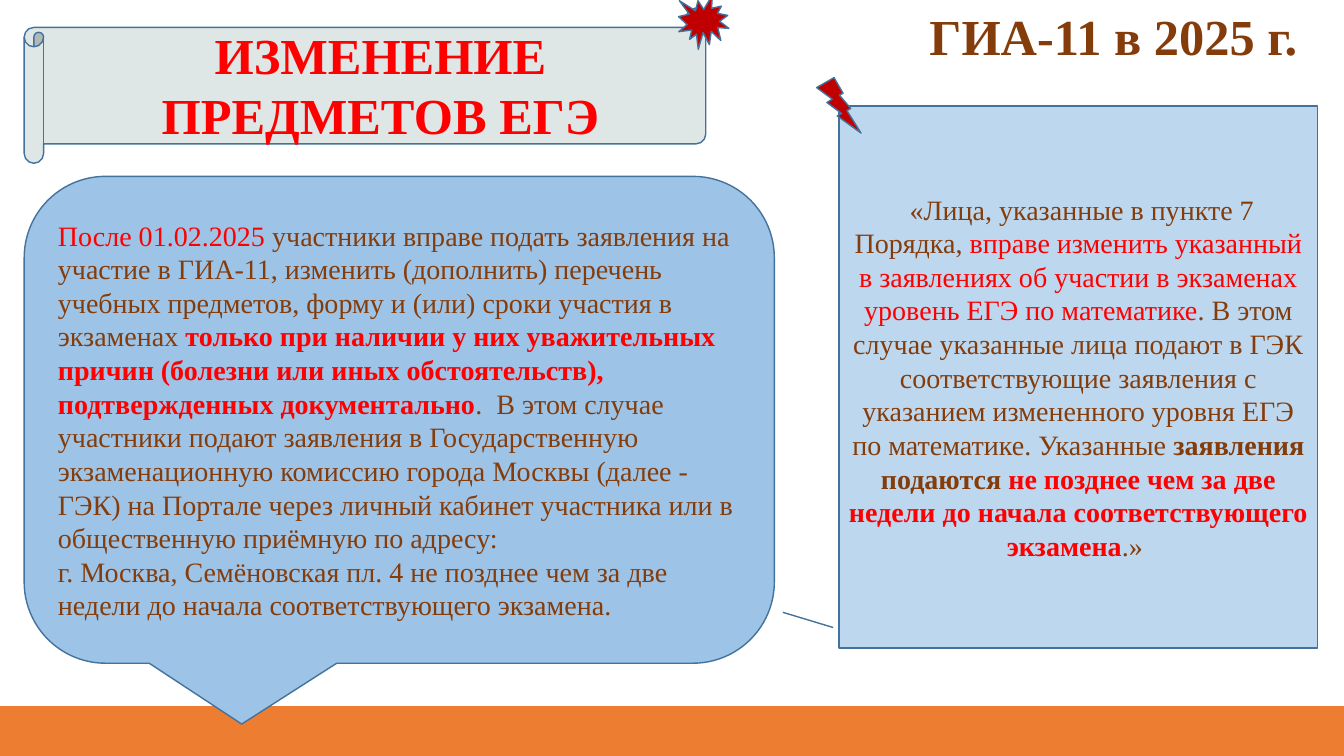
from pptx import Presentation
from pptx.dml.color import RGBColor
from pptx.enum.shapes import MSO_SHAPE as Preset
from pptx.enum.text import MSO_ANCHOR as Anchor, PP_ALIGN as Align
from pptx.util import Emu, Pt

PX = 9144  # EMU per px, 100 px to the inch
FONT = "Times New Roman"
COLORS = {
    "orange": "ED7D31",
    "outline": "43729D",
    "scroll": "DEE7E5",
    "callout": "9DC3E6",
    "note": "BDD7EE",
    "accent": "C00000",
    "red": "FF0000",
    "brown": "843C0B",
}


def add_figure(preset, bounds, fill, line="outline", adjustments=()):
    figure = page.shapes.add_shape(preset, *[Emu(v * PX) for v in bounds])
    figure.shadow.inherit = False
    figure.fill.solid()
    figure.fill.fore_color.rgb = RGBColor.from_string(COLORS[fill])
    figure.line.color.rgb = RGBColor.from_string(COLORS[line])
    figure.line.width = Pt(1)
    for index, value in enumerate(adjustments):
        figure.adjustments[index] = value
    return figure


def write(box, paragraphs, size, align, anchor):
    frame = box.text_frame
    frame.word_wrap = True
    frame.vertical_anchor = anchor
    for index, spans in enumerate(paragraphs):
        para = frame.add_paragraph() if index else frame.paragraphs[0]
        para.alignment = align
        for text, color, bold in spans:
            span = para.add_run()
            span.text = text
            span.font.name = FONT
            span.font.size = Pt(size)
            span.font.bold = bold
            span.font.color.rgb = RGBColor.from_string(COLORS[color])


deck = Presentation()
deck.slide_width, deck.slide_height = Emu(1333 * PX), Emu(750 * PX)
page = deck.slides.add_slide(deck.slide_layouts[6])

# Footer band and title scroll
add_figure(Preset.RECTANGLE, (0, 701, 1333, 49), "orange", "orange")
add_figure(Preset.HORIZONTAL_SCROLL, (24, 8, 676, 154), "scroll", adjustments=[0.125])

# Headings
headings = [
    ("ГИА-11 в 2025 г.", (912, 0, 421, 86), "brown", Align.LEFT),
    ("ИЗМЕНЕНИЕ ПРЕДМЕТОВ ЕГЭ", (77, 19, 601, 130), "red", Align.CENTER),
]
for text, bounds, color, align in headings:
    box = page.shapes.add_textbox(*[Emu(v * PX) for v in bounds])
    write(box, [[(text, color, True)]], 36, align, Anchor.TOP)

# Callout on changing the subjects
subjects = add_figure(Preset.ROUNDED_RECTANGULAR_CALLOUT, (24, 175, 744, 483),
                      "callout", adjustments=[-0.21, 0.625, 0.167])
write(subjects, [
    [
        ("После 01.02.2025 ", "red", False),
        ("участники вправе подать заявления на участие в ГИА-11, изменить "
         "(дополнить) перечень учебных предметов, форму и (или) сроки участия "
         "в экзаменах ", "brown", False),
        ("только при наличии у них уважительных причин (болезни или иных "
         "обстоятельств), подтвержденных документально", "red", True),
        (".  В этом случае участники подают заявления в Государственную "
         "экзаменационную комиссию города Москвы (далее - ГЭК) на Портале "
         "через личный кабинет участника или в общественную приёмную по "
         "адресу:", "brown", False),
    ],
    [("г. Москва, Семёновская пл. 4 не позднее чем за две недели до начала "
      "соответствующего экзамена.", "brown", False)],
], 20, Align.LEFT, Anchor.MIDDLE)

# Note on the mathematics level
level = add_figure(Preset.LINE_CALLOUT_1, (832, 105, 475, 538), "note",
                   adjustments=[0.962, -0.012, 0.934, -0.117])
write(level, [[
    (" «Лица, указанные в пункте 7 Порядка, ", "brown", False),
    ("вправе изменить указанный в заявлениях об участии в экзаменах уровень "
     "ЕГЭ по математике", "red", False),
    (". В этом случае указанные лица подают в ГЭК соответствующие заявления "
     "с указанием измененного уровня ЕГЭ по математике. Указанные ",
     "brown", False),
    ("заявления подаются ", "brown", True),
    ("не позднее чем за две недели до начала соответствующего экзамена",
     "red", True),
    (".» ", "brown", False),
]], 20, Align.CENTER, Anchor.MIDDLE)

# Accents
add_figure(Preset.EXPLOSION1, (673, -5, 50, 54), "accent")
add_figure(Preset.LIGHTNING_BOLT, (810, 77, 44, 55), "accent")

deck.save("out.pptx")
